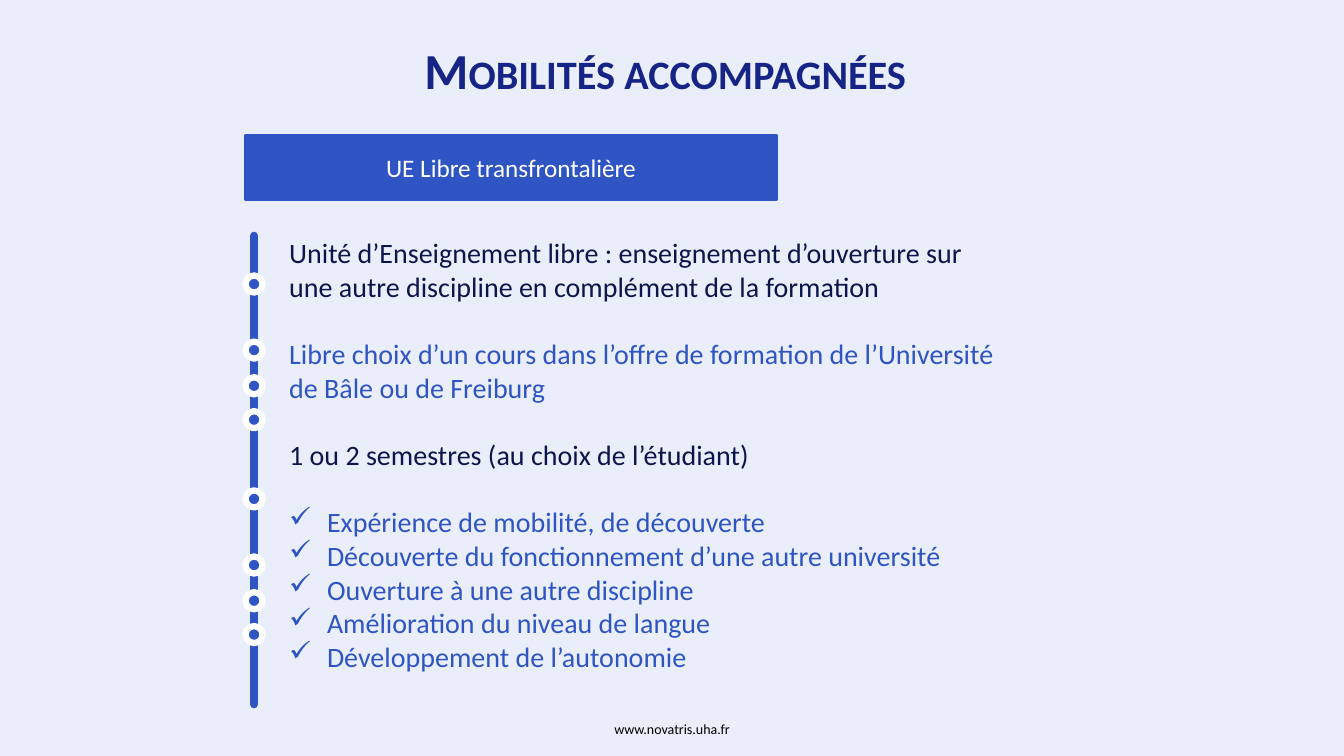
from lxml.etree import SubElement
from pptx import Presentation
from pptx.dml.color import RGBColor
from pptx.enum.shapes import MSO_CONNECTOR, MSO_SHAPE
from pptx.enum.text import MSO_ANCHOR, MSO_AUTO_SIZE, PP_ALIGN
from pptx.oxml.ns import qn
from pptx.util import Pt

PALE, BLUE, NAVY, INK = "EAEEFA", "2F54C3", "162585", "0D164A"
WHITE, BLACK = "FFFFFF", "000000"


def colour(value):
    return RGBColor.from_string(value)


class SlideBuilder:
    """Holds the style and the current slide."""

    font = "Calibri"

    def __init__(self, page, background):
        self.page = page
        page.background.fill.solid()
        page.background.fill.fore_color.rgb = colour(background)

    def add_span(self, para, text, size, tint, bold=False):
        span = para.add_run()
        span.text = text
        span.font.name = self.font
        span.font.size = Pt(size)
        span.font.bold = bold
        span.font.color.rgb = colour(tint)
        return span

    def title(self, text, left, top, width, height):
        box = self.page.shapes.title
        box.left, box.top, box.width, box.height = map(Pt, (left, top, width, height))
        frame = box.text_frame
        frame.auto_size = MSO_AUTO_SIZE.NONE
        frame.vertical_anchor = MSO_ANCHOR.TOP
        para = frame.paragraphs[0]
        para.alignment = PP_ALIGN.LEFT
        span = self.add_span(para, text, 36, NAVY, bold=True)
        span.font._element.set("cap", "small")

    def text_box(self, left, top, width, height):
        box = self.page.shapes.add_textbox(*map(Pt, (left, top, width, height)))
        box.text_frame.word_wrap = True
        return box.text_frame

    def shape(self, kind, left, top, width, height, fill, line, weight):
        item = self.page.shapes.add_shape(kind, *map(Pt, (left, top, width, height)))
        item.shadow.inherit = False
        item.fill.solid()
        item.fill.fore_color.rgb = colour(fill)
        item.line.color.rgb = colour(line)
        item.line.width = Pt(weight)
        return item

    def banner(self, text, left, top, width, height):
        box = self.shape(MSO_SHAPE.RECTANGLE, left, top, width, height, BLUE, BLUE, 2)
        box.text_frame.vertical_anchor = MSO_ANCHOR.MIDDLE
        para = box.text_frame.paragraphs[0]
        para.alignment = PP_ALIGN.CENTER
        self.add_span(para, text, 18, WHITE)

    def rail(self, x, top, length, dot_offsets, dot_size):
        line = self.page.shapes.add_connector(
            MSO_CONNECTOR.STRAIGHT, Pt(x), Pt(top), Pt(x), Pt(top + length))
        line.line.color.rgb = colour(BLUE)
        line.line.width = Pt(6)
        line.line._get_or_add_ln().set("cap", "rnd")
        SubElement(line._element.spPr, qn("a:effectLst"))
        for offset in dot_offsets:
            self.shape(MSO_SHAPE.OVAL, x - dot_size / 2, top + offset,
                       dot_size, dot_size, BLUE, WHITE, 4.5)

    def tick(self, para, indent):
        properties = para._p.get_or_add_pPr()
        properties.set("marL", str(Pt(indent)))
        properties.set("indent", str(-Pt(indent)))
        SubElement(properties, qn("a:buChar"), char="✓")

    def body(self, entries, left, top, width, height):
        frame = self.text_box(left, top, width, height)
        for number, (text, tint, ticked, gap) in enumerate(entries):
            para = frame.add_paragraph() if number else frame.paragraphs[0]
            if ticked:
                self.tick(para, 27)
            para.space_before = Pt(gap)
            self.add_span(para, text, 20, tint)


def main():
    deck = Presentation()
    deck.slide_width, deck.slide_height = Pt(960), Pt(540)
    slide = SlideBuilder(deck.slides.add_slide(deck.slide_layouts[5]), PALE)

    # Heading and footer
    slide.title("Mobilités accompagnées", 296, 24.5, 373, 51)
    slide.banner("UE Libre transfrontalière", 175, 97, 380, 45.5)
    footer = slide.text_box(366, 511, 228, 29).paragraphs[0]
    footer.alignment = PP_ALIGN.CENTER
    slide.add_span(footer, "www.novatris.uha.fr", 10, BLACK)

    # Two identical rails, one below the other
    for top in (168.5, 322):
        slide.rail(181.5, top, 181, (28.3, 75.5, 101, 125.2), 12.2)

    # Description: a line's gap between parts, ticks kept together
    line_gap = 24
    benefits = (
        "Expérience de mobilité, de découverte",
        "Découverte du fonctionnement d’une autre université",
        "Ouverture à une autre discipline",
        "Amélioration du niveau de langue",
        "Développement de l’autonomie",
    )
    entries = [
        ("Unité d’Enseignement libre : enseignement d’ouverture sur une autre "
         "discipline en complément de la formation", INK, False, 0),
        ("Libre choix d’un cours dans l’offre de formation de l’Université "
         "de Bâle ou de Freiburg", BLUE, False, line_gap),
        ("1 ou 2 semestres (au choix de l’étudiant)", INK, False, line_gap),
    ]
    entries += [(text, BLUE, True, 0 if number else line_gap)
                for number, text in enumerate(benefits)]
    slide.body(entries, 199.5, 165, 529, 320)

    deck.save("out.pptx")


if __name__ == "__main__":
    main()
